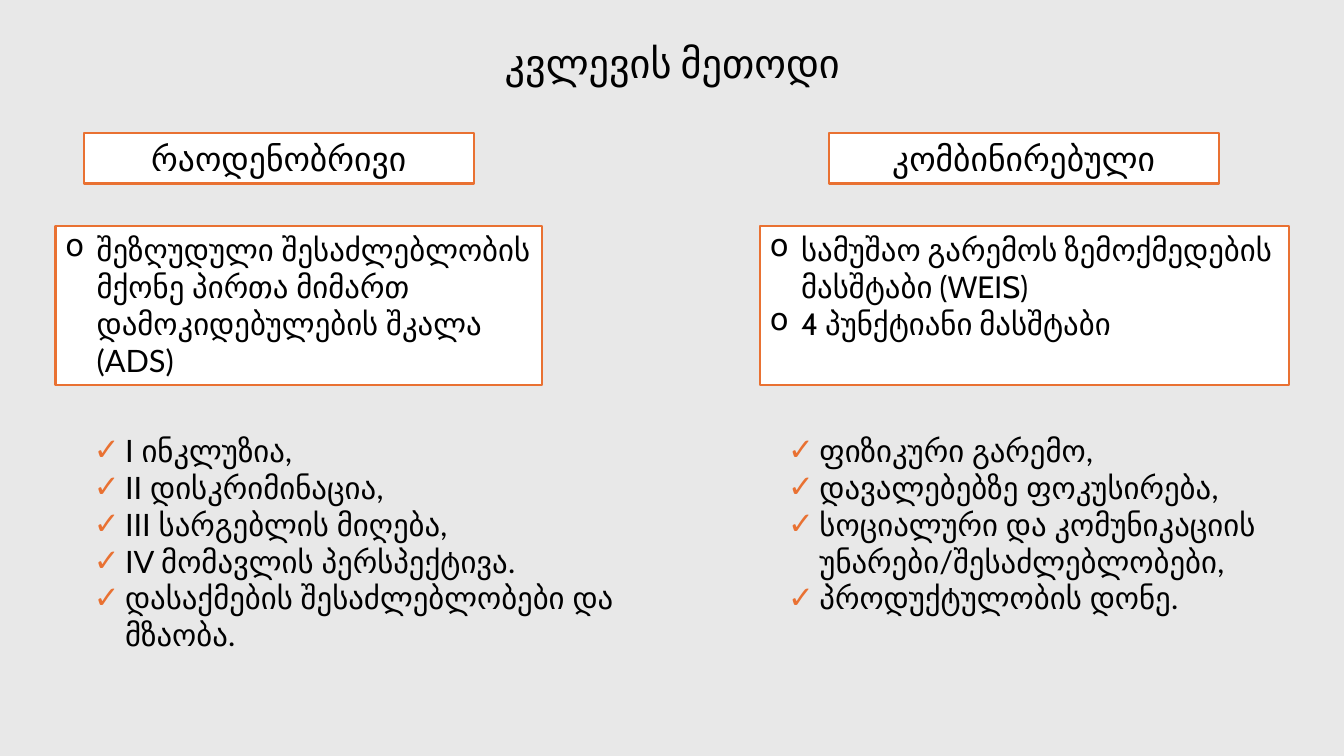
from dataclasses import dataclass

from lxml import etree
from pptx import Presentation
from pptx import util as u
from pptx.dml.color import RGBColor
from pptx.enum import shapes, text
from pptx.oxml import ns

BACKGROUND = RGBColor(0xE8, 0xE8, 0xE8)
WHITE = RGBColor(0xFF, 0xFF, 0xFF)
BLACK = RGBColor(0x00, 0x00, 0x00)
ORANGE = RGBColor(0xE9, 0x71, 0x32)

SLIDE_WIDTH, SLIDE_HEIGHT = u.Inches(13.333), u.Inches(7.5)
INDENT = u.Inches(0.31)
TWO_CONTENT_LAYOUT = 3


@dataclass(frozen=True)
class Area:
    """Left, top, width and height as percentages of the slide."""
    left: float
    top: float
    width: float
    height: float

    def place(self, shape) -> None:
        shape.left = round(SLIDE_WIDTH * self.left / 100)
        shape.top = round(SLIDE_HEIGHT * self.top / 100)
        shape.width = round(SLIDE_WIDTH * self.width / 100)
        shape.height = round(SLIDE_HEIGHT * self.height / 100)


@dataclass(frozen=True)
class Style:
    font: str
    size: float
    bullet: str = ""
    bullet_color: RGBColor | None = None


@dataclass(frozen=True)
class Method:
    heading: str
    heading_area: Area
    scales: list[str]
    scales_font: str
    scales_area: Area
    factors: list[str]
    factors_area: Area


TITLE = "კვლევის მეთოდი"
TITLE_AREA = Area(6.9, 5.33, 86.25, 6.67)
TITLE_STYLE = Style("Cabin", 28.8)
HEADING_STYLE = Style("Cabin", 24)
FACTORS_STYLE = Style("Lato", 22, "✓", ORANGE)

METHODS = [
    Method(
        "რაოდენობრივი", Area(6.23, 17.6, 29.03, 6.67),
        ["შეზღუდული შესაძლებლობის მქონე პირთა მიმართ დამოკიდებულების შკალა (ADS)"],
        "Lato", Area(4.13, 29.87, 36.23, 21.07),
        ["I ინკლუზია,", "II დისკრიმინაცია,", "III სარგებლის მიღება,",
         "IV მომავლის პერსპექტივა.", "დასაქმების შესაძლებლობები და მზაობა."],
        Area(6.23, 56.4, 43.8, 30.93),
    ),
    Method(
        "კომბინირებული", Area(61.65, 17.6, 29.03, 6.67),
        ["სამუშაო გარემოს ზემოქმედების მასშტაბი (WEIS)", "4 პუნქტიანი მასშტაბი"],
        "Cabin", Area(56.55, 29.87, 39.38, 21.07),
        ["ფიზიკური გარემო,", "დავალებებზე ფოკუსირება,",
         "სოციალური და კომუნიკაციის უნარები/შესაძლებლობები,", "პროდუქტულობის დონე."],
        Area(57.9, 56.4, 38.48, 26),
    ),
]


def add_bullet(paragraph, style: Style) -> None:
    properties = paragraph._p.get_or_add_pPr()
    properties.set("marL", str(INDENT))
    properties.set("indent", str(-INDENT))
    if style.bullet_color is not None:
        color = etree.SubElement(properties, ns.qn("a:buClr"))
        etree.SubElement(color, ns.qn("a:srgbClr"), val=str(style.bullet_color))
    etree.SubElement(properties, ns.qn("a:buChar"), char=style.bullet)


def write(shape, lines: list[str], style: Style, anchor=text.MSO_ANCHOR.TOP) -> None:
    frame = shape.text_frame
    frame.text = "\n".join(lines)
    frame.word_wrap = True
    frame.auto_size = text.MSO_AUTO_SIZE.NONE
    frame.vertical_anchor = anchor
    for paragraph in frame.paragraphs:
        paragraph.space_before = u.Pt(0)
        paragraph.alignment = text.PP_ALIGN.LEFT if style.bullet else text.PP_ALIGN.CENTER
        if style.bullet:
            add_bullet(paragraph, style)
        for run in paragraph.runs:
            run.font.name = style.font
            run.font.size = u.Pt(style.size)
            run.font.color.rgb = BLACK


def add_box(slide, area: Area, lines: list[str], style: Style) -> None:
    shape = slide.shapes.add_shape(shapes.MSO_SHAPE.RECTANGLE, 0, 0, 0, 0)
    area.place(shape)
    shape.shadow.inherit = False
    shape.fill.solid()
    shape.fill.fore_color.rgb = WHITE
    shape.line.color.rgb = ORANGE
    shape.line.width = u.Pt(1.5)
    write(shape, lines, style)


def main() -> None:
    presentation = Presentation()
    presentation.slide_width, presentation.slide_height = SLIDE_WIDTH, SLIDE_HEIGHT
    slide = presentation.slides.add_slide(presentation.slide_layouts[TWO_CONTENT_LAYOUT])
    slide.background.fill.solid()
    slide.background.fill.fore_color.rgb = BACKGROUND

    title, *bodies = slide.placeholders
    TITLE_AREA.place(title)
    write(title, [TITLE], TITLE_STYLE, text.MSO_ANCHOR.MIDDLE)
    title.text_frame.paragraphs[0].line_spacing = 0.9

    for method, body in zip(METHODS, bodies):
        add_box(slide, method.heading_area, [method.heading], HEADING_STYLE)
        add_box(slide, method.scales_area, method.scales, Style(method.scales_font, 22, "o"))
        method.factors_area.place(body)
        write(body, method.factors, FACTORS_STYLE)

    presentation.save("out.pptx")


if __name__ == "__main__":
    main()
